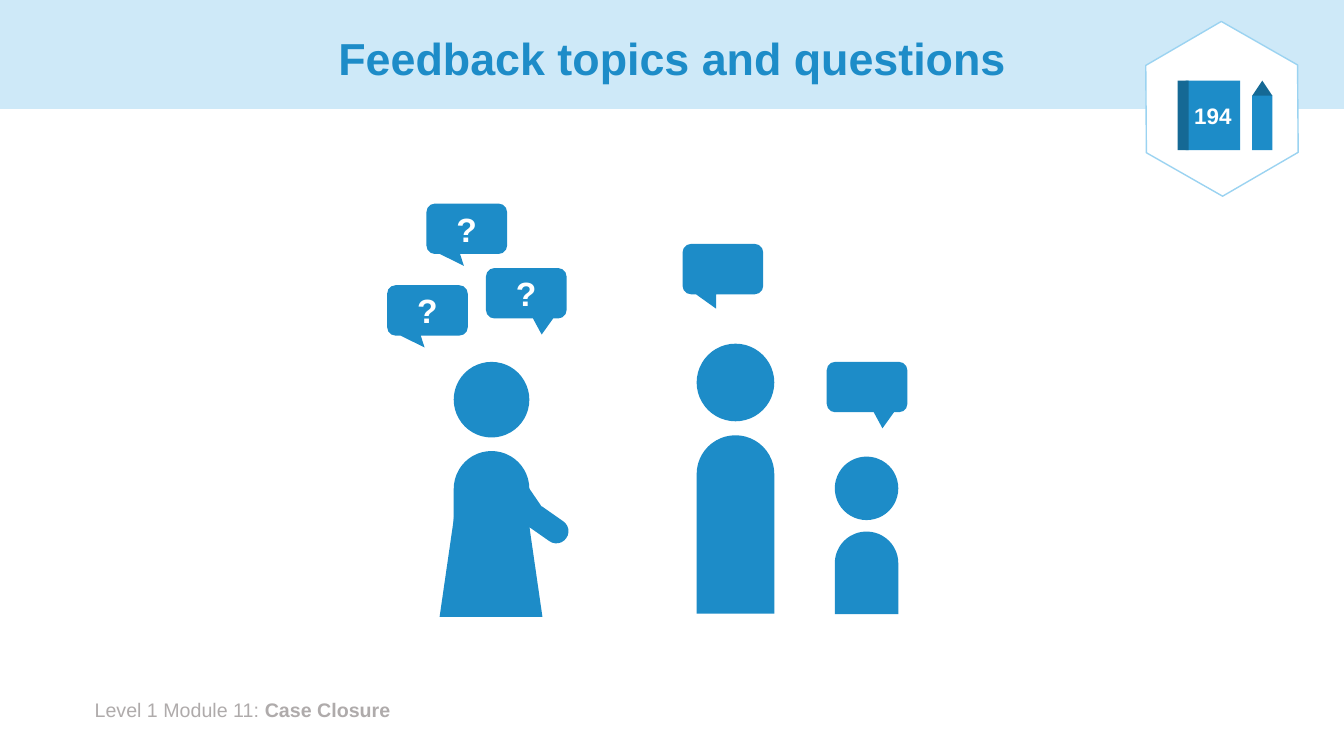
from dataclasses import dataclass

from pptx import Presentation
from pptx.dml.color import RGBColor
from pptx.enum.shapes import MSO_SHAPE
from pptx.enum.text import MSO_ANCHOR, PP_ALIGN
from pptx.util import Inches, Pt

# Content
TITLE = "Feedback topics and questions"
FOOTER = [("Level 1 Module 11: ", False), ("Case Closure", True)]
PAGE_NUMBER = "194"

# People: left, top, head size, body height
PEOPLE = {
    "child": (8.28, 4.53, 0.63, 0.82),
    "adult": (6.91, 3.41, 0.77, 1.77),
    "woman": (4.5, 3.59, 0.75, 1.63),
}
# Arm sections: left, top, width, height, rotation
WOMAN_ARM = [(5.09, 4.7, 0.23, 0.57, 145.7), (5.34, 5.04, 0.24, 0.38, 125)]
WOMAN_SKIRT = (4.36, 4.71, 1.02, 1.41)

# Speech bubbles: left, top, tail tip (shares of the bubble), text
BUBBLES = [
    (6.77, 2.42, (-0.083, 0.786), ""),
    (8.2, 3.59, (0.191, 0.819), ""),
    (4.82, 2.66, (0.191, 0.819), "?"),
    (3.84, 2.83, (-0.035, 0.736), "?"),
    (4.23, 2.02, (-0.035, 0.736), "?"),
]
BUBBLE_SIZE = (0.8, 0.5)

SLIDE_WIDTH, SLIDE_HEIGHT = 13.33, 7.5
BAND_HEIGHT = 1.08
NECK_SHARE = 0.18  # gap between head and body, as a share of the head


@dataclass(frozen=True)
class Theme:
    font: str = "Arial"
    main: str = "1D8CC8"
    dark: str = "156995"
    band: str = "CEE9F8"
    outline: str = "9BD3F1"
    white: str = "FFFFFF"
    footer: str = "AFABAB"
    title_size: int = 32
    bubble_size: int = 24
    number_size: int = 16
    footer_size: int = 14


theme = Theme()


def add_shape(slide, kind, box, fill=theme.main, rotation=0, adjustments=()):
    shape = slide.shapes.add_shape(kind, *map(Inches, box))
    shape.shadow.inherit = False
    shape.fill.solid()
    shape.fill.fore_color.rgb = RGBColor.from_string(fill)
    shape.line.fill.background()
    shape.rotation = rotation
    for index, value in enumerate(adjustments):
        shape.adjustments[index] = value
    return shape


def style_font(paragraph, size, color, bold=None):
    font = paragraph.font
    font.name, font.size, font.bold = theme.font, Pt(size), bold
    font.color.rgb = RGBColor.from_string(color)


def write_centred(shape, text, size, color):
    frame = shape.text_frame
    frame.text = text
    frame.vertical_anchor = MSO_ANCHOR.MIDDLE
    paragraph = frame.paragraphs[0]
    paragraph.alignment = PP_ALIGN.CENTER
    style_font(paragraph, size, color, bold=True)
    return paragraph


def add_heading(slide):
    title = slide.shapes.title
    title.left, title.top = Inches(0.92), Inches(0.13)
    title.width, title.height = Inches(11.5), Inches(BAND_HEIGHT - 0.13)
    paragraph = write_centred(title, TITLE, theme.title_size, theme.main)
    paragraph.line_spacing = 0.9
    # The band sits behind the title
    band = add_shape(slide, MSO_SHAPE.RECTANGLE,
                     (0, 0, SLIDE_WIDTH, BAND_HEIGHT), theme.band)
    title.element.addprevious(band.element)


def add_footer(slide):
    box = slide.shapes.add_textbox(*map(Inches, (0.84, 6.87, 4.55, 0.34)))
    box.text_frame.word_wrap = True
    paragraph = box.text_frame.paragraphs[0]
    style_font(paragraph, theme.footer_size, theme.footer)
    for text, bold in FOOTER:
        run = paragraph.add_run()
        run.text = text
        run.font.bold = bold


def add_person(slide, left, top, head, body_height):
    body_top = top + head * (1 + NECK_SHARE)
    add_shape(slide, MSO_SHAPE.OVAL, (left, top, head, head))
    add_shape(slide, MSO_SHAPE.ROUND_2_SAME_RECTANGLE,
              (left, body_top, head, body_height), adjustments=(0.5, 0))


def add_bubble(slide, left, top, tail, text):
    bubble = add_shape(slide, MSO_SHAPE.ROUNDED_RECTANGULAR_CALLOUT,
                       (left, top, *BUBBLE_SIZE), adjustments=(*tail, 0.167))
    if text:
        write_centred(bubble, text, theme.bubble_size, theme.white)


def add_page_badge(slide):
    hexagon = add_shape(slide, MSO_SHAPE.HEXAGON, (11.25, 0.33, 1.74, 1.5),
                        theme.white, 29.7, (0.29,))
    hexagon.line.color.rgb = RGBColor.from_string(theme.outline)
    hexagon.line.width = Pt(1)
    # Book and pencil share one top and one height
    top, height, tip = 0.8, 0.69, 0.15
    book = add_shape(slide, MSO_SHAPE.RECTANGLE, (11.76, top, 0.54, height))
    write_centred(book, PAGE_NUMBER, theme.number_size, theme.white)
    book.text_frame.word_wrap = False
    add_shape(slide, MSO_SHAPE.RECTANGLE, (11.68, top, 0.11, height), theme.dark)
    add_shape(slide, MSO_SHAPE.ISOSCELES_TRIANGLE, (12.42, top, 0.2, tip), theme.dark)
    add_shape(slide, MSO_SHAPE.RECTANGLE, (12.42, top + tip, 0.2, height - tip))


def main():
    presentation = Presentation()
    presentation.slide_width = Inches(SLIDE_WIDTH)
    presentation.slide_height = Inches(SLIDE_HEIGHT)
    slide = presentation.slides.add_slide(presentation.slide_layouts[5])

    add_heading(slide)
    add_footer(slide)

    # Figures
    for *box, rotation in WOMAN_ARM:
        add_shape(slide, MSO_SHAPE.ROUND_2_SAME_RECTANGLE, box,
                  rotation=rotation, adjustments=(0.493, 0))
    add_shape(slide, MSO_SHAPE.FLOWCHART_MANUAL_OPERATION, WOMAN_SKIRT, rotation=180)
    for person in PEOPLE.values():
        add_person(slide, *person)
    for bubble in BUBBLES:
        add_bubble(slide, *bubble)

    add_page_badge(slide)
    presentation.save("out.pptx")


if __name__ == "__main__":
    main()
